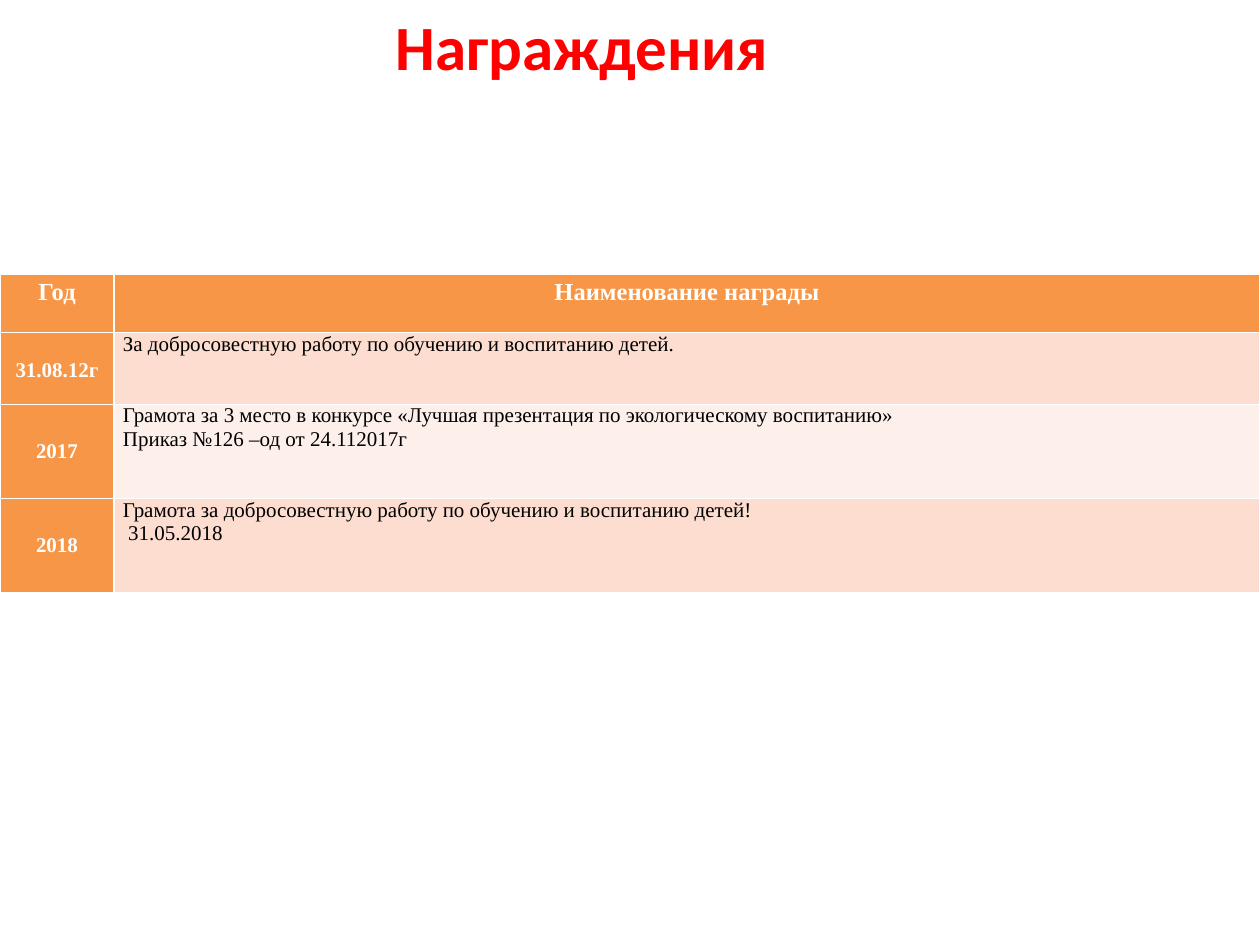
from pptx import Presentation
from pptx.dml.color import RGBColor
from pptx.enum.text import MSO_ANCHOR, PP_ALIGN
from pptx.util import Cm, Pt

CENTER, LEFT = PP_ALIGN.CENTER, PP_ALIGN.LEFT
TOP, MIDDLE = MSO_ANCHOR.TOP, MSO_ANCHOR.MIDDLE

TITLE = "Награждения"
HEAD = ("Год", "Наименование награды")
AWARDS = [
    ("31.08.12г", "За добросовестную работу по обучению и воспитанию детей."),
    ("2017", "Грамота за 3 место в конкурсе «Лучшая презентация по экологическому воспитанию»\n"
             "Приказ №126 –од от 24.112017г"),
    ("2018", "Грамота за добросовестную работу по обучению и воспитанию детей!\n 31.05.2018"),
]
WIDTHS = (2.3, 23.1)
HEIGHTS = (1.17, 1.45, 1.9, 1.9)
ORANGE, BANDS = "F79646", ("FCDDCF", "FDEFE9")
WHITE, BLACK, RED = "FFFFFF", "000000", "FF0000"


def color(code):
    return RGBColor.from_string(code)


def write(frame, text, font, size, ink, bold, align, space=1.0):
    frame.text = text
    for para in frame.paragraphs:
        para.alignment = align
        para.line_spacing = space
        for run in para.runs:
            run.font.name = font
            run.font.size = Pt(size)
            run.font.bold = bold
            run.font.color.rgb = color(ink)


def add_title(slide):
    box = slide.shapes.add_textbox(Cm(0.3), Cm(-0.08), Cm(22.86), Cm(2))
    frame = box.text_frame
    frame.word_wrap = True
    frame.vertical_anchor = MIDDLE
    write(frame, TITLE, "Calibri", 36, RED, True, CENTER)


def add_awards(slide):
    rows = [HEAD, *AWARDS]
    table = slide.shapes.add_table(
        len(rows), len(HEAD), Cm(0), Cm(5.53), Cm(sum(WIDTHS)), Cm(sum(HEIGHTS))
    ).table
    for col, width in zip(table.columns, WIDTHS):
        col.width = Cm(width)
    for row, height in zip(table.rows, HEIGHTS):
        row.height = Cm(height)
    for i, row in enumerate(rows):
        for j, text in enumerate(row):
            cell = table.cell(i, j)
            head = i == 0
            label = head or j == 0
            cell.margin_left = cell.margin_right = Cm(0.18)
            cell.margin_top = cell.margin_bottom = Cm(0)
            cell.vertical_anchor = MIDDLE if label and not head else TOP
            cell.fill.solid()
            cell.fill.fore_color.rgb = color(ORANGE if label else BANDS[(i - 1) % 2])
            write(
                cell.text_frame, text, "Times New Roman", 14 if head else 12,
                WHITE if label else BLACK, label, CENTER if label else LEFT,
                1.15 if label and i < 2 else 1.0,
            )


def main():
    deck = Presentation()
    deck.slide_width, deck.slide_height = Cm(25.4), Cm(19.05)
    slide = deck.slides.add_slide(deck.slide_layouts[6])
    add_title(slide)
    add_awards(slide)
    deck.save("out.pptx")


if __name__ == "__main__":
    main()
